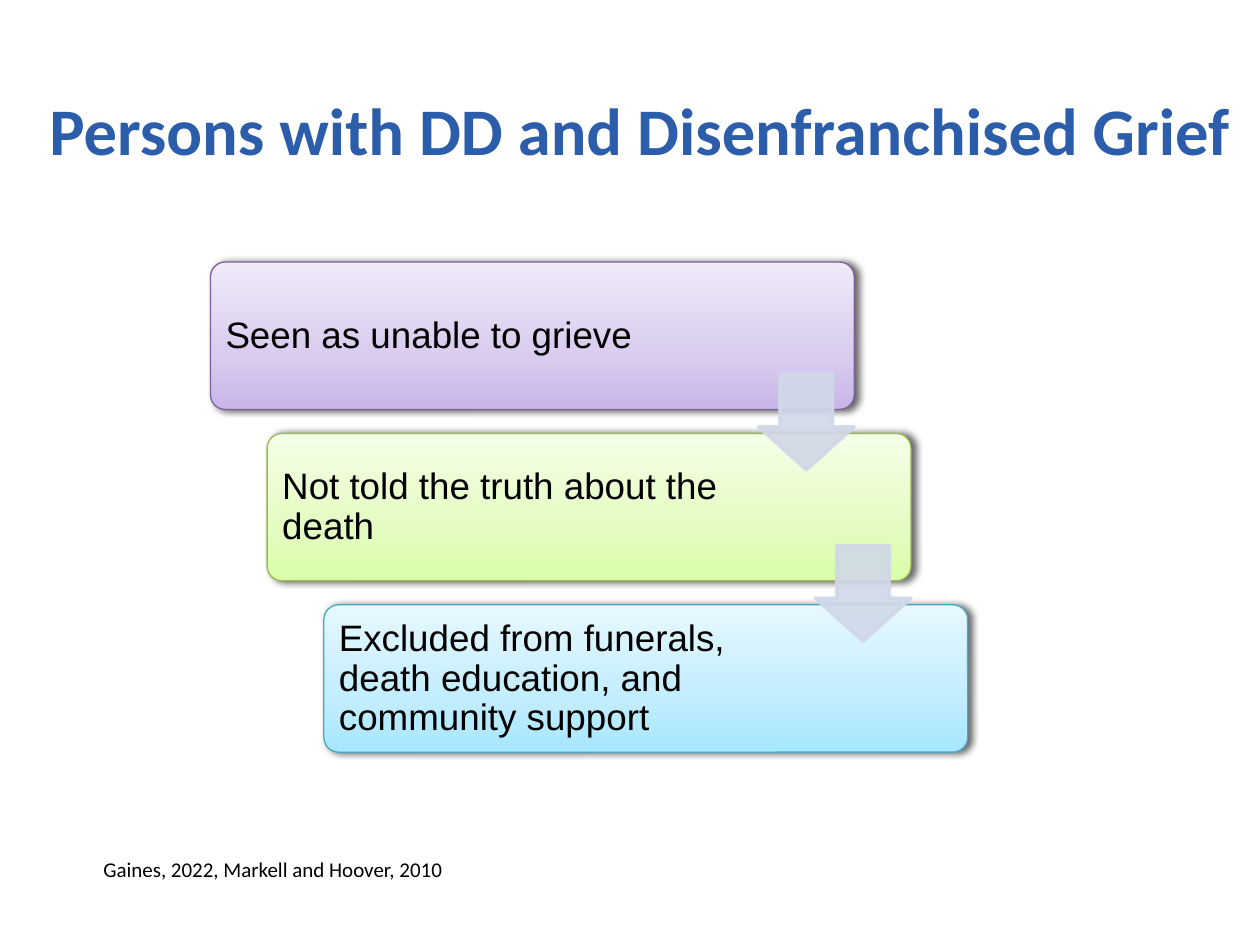
from copy import deepcopy
from dataclasses import dataclass

from lxml.etree import SubElement
from pptx import Presentation
from pptx.dml.color import RGBColor
from pptx.enum.shapes import MSO_SHAPE
from pptx.enum.text import MSO_ANCHOR, MSO_AUTO_SIZE, PP_ALIGN
from pptx.oxml.ns import qn
from pptx.util import Inches, Pt


@dataclass(frozen=True)
class Theme:
    title: str = "2B5DAA"
    text: str = "000000"
    arrow: str = "D0D8E8"
    shadow: str = "000000"
    purple: tuple = ("7D60A0", "C9B5E8", "D8CBEE", "F0EAF9")
    green: tuple = ("98B955", "DAFDA7", "E4FCC2", "F5FFE7")
    blue: tuple = ("46AAC5", "A7E6FF", "C1EDFF", "E7F8FF")
    gradient_positions: tuple = (0, 0.35, 1)
    heading_font: str = "Calibri"
    body_font: str = "Arial"
    title_size: int = 38
    step_size: int = 21
    citation_size: int = 12


THEME = Theme()
STEPS = (
    ("Seen as unable to grieve", THEME.purple),
    ("Not told the truth about the death", THEME.green),
    ("Excluded from funerals, death education, and community support", THEME.blue),
)
STEP_RIGHT, STEP_DOWN = 0.45, 1.36


def add_text(slide, text, box, font, size, color, inset=0.05):
    label = slide.shapes.add_textbox(*map(Inches, box))
    frame = label.text_frame
    frame.word_wrap = True
    frame.margin_left = frame.margin_right = Inches(inset)
    frame.margin_top = frame.margin_bottom = Inches(inset)
    paragraph = frame.paragraphs[0]
    paragraph.text = text
    paragraph.font.name = font
    paragraph.font.size = Pt(size)
    paragraph.font.color.rgb = RGBColor.from_string(color)
    return frame


def fill_gradient(panel, colors):
    panel.fill.gradient()
    panel.fill.gradient_angle = 90
    stop_list = panel._element.spPr.find(".//" + qn("a:gsLst"))
    stop_list.append(deepcopy(stop_list[0]))
    stops = zip(panel.fill.gradient_stops, colors, THEME.gradient_positions)
    for stop, color, position in stops:
        stop.color.rgb = RGBColor.from_string(color)
        stop.position = position


def add_shadow(panel):
    panel.shadow.inherit = False
    effects = panel._element.spPr.find(qn("a:effectLst"))
    shadow = SubElement(effects, qn("a:outerShdw"), blurRad=str(Pt(4)),
                        dist=str(Pt(2)), dir="0", rotWithShape="0")
    color = SubElement(shadow, qn("a:srgbClr"), val=THEME.shadow)
    SubElement(color, qn("a:alpha"), val="60000")


def add_step(slide, index, text, palette):
    dx, dy = index * STEP_RIGHT, index * STEP_DOWN
    panel = slide.shapes.add_shape(
        MSO_SHAPE.ROUNDED_RECTANGLE,
        *map(Inches, (1.67 + dx, 2.08 + dy, 5.11, 1.17)))
    panel.adjustments[0] = 0.1
    border, *gradient = palette
    fill_gradient(panel, gradient)
    panel.line.color.rgb = RGBColor.from_string(border)
    panel.line.width = Pt(0.75)
    add_shadow(panel)

    frame = add_text(slide, text, (1.7 + dx, 2.12 + dy, 3.83, 1.1),
                     THEME.body_font, THEME.step_size, THEME.text, inset=0.09)
    frame.vertical_anchor = MSO_ANCHOR.MIDDLE
    frame.paragraphs[0].line_spacing = 0.9


def add_arrow(slide, index):
    arrow = slide.shapes.add_shape(
        MSO_SHAPE.DOWN_ARROW,
        *map(Inches, (6.02 + index * STEP_RIGHT, 2.97 + index * STEP_DOWN, 0.76, 0.76)))
    arrow.adjustments[0] = 0.55
    arrow.adjustments[1] = 0.45
    arrow.shadow.inherit = False
    arrow.fill.solid()
    arrow.line.width = Pt(2)
    for color in (arrow.fill.fore_color, arrow.line.color):
        color.rgb = RGBColor.from_string(THEME.arrow)
    for color in arrow._element.spPr.iter(qn("a:srgbClr")):
        SubElement(color, qn("a:alpha"), val="90000")


def main():
    presentation = Presentation()
    presentation.slide_width = Inches(10)
    presentation.slide_height = Inches(7.5)
    slide = presentation.slides.add_slide(presentation.slide_layouts[6])

    title = add_text(slide, "Persons with DD and Disenfranchised Grief",
                     (0.16, 0.66, 9.84, 1.03), THEME.heading_font,
                     THEME.title_size, THEME.title).paragraphs[0]
    title.alignment = PP_ALIGN.CENTER
    title.font.bold = True

    for index, (text, palette) in enumerate(STEPS):
        add_step(slide, index, text, palette)
    for index in range(len(STEPS) - 1):
        add_arrow(slide, index)

    citation = add_text(slide, "Gaines, 2022, Markell and Hoover, 2010",
                        (0.77, 6.75, 2.85, 0.3), THEME.heading_font,
                        THEME.citation_size, THEME.text)
    citation.word_wrap = False
    citation.auto_size = MSO_AUTO_SIZE.SHAPE_TO_FIT_TEXT

    presentation.save("out.pptx")


if __name__ == "__main__":
    main()
